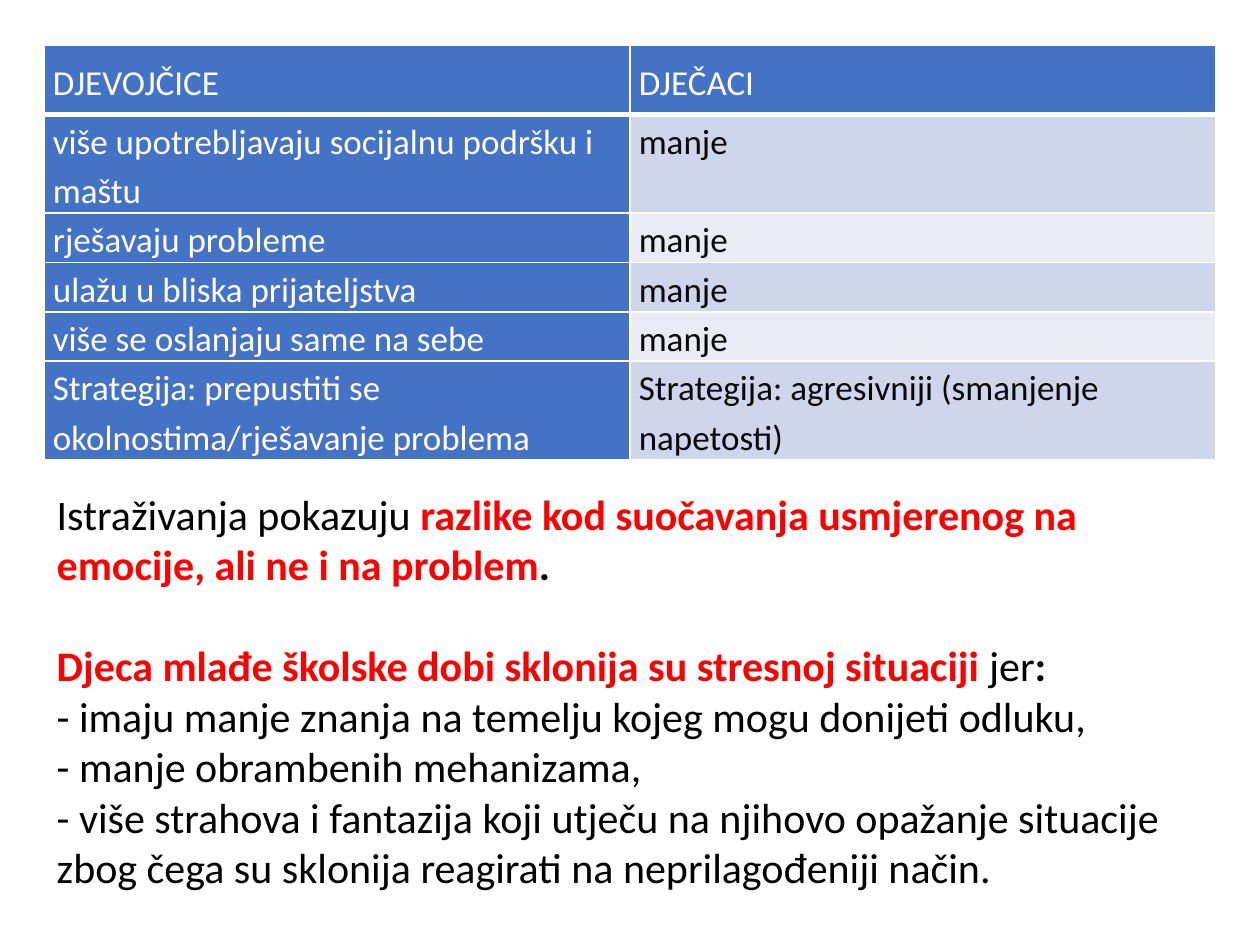
from dataclasses import dataclass

from lxml import etree
from pptx import Presentation
from pptx import util as u
from pptx.dml.color import RGBColor
from pptx.enum import text
from pptx.oxml import ns


@dataclass(frozen=True)
class Theme:
    face: str = "Calibri"
    cell: int = 20
    body: int = 24
    gap: int = 29
    blue: str = "4472C4"
    bands: tuple = ("CFD5EA", "E9EBF5")
    white: str = "FFFFFF"
    ink: str = "07080B"
    black: str = "000000"
    red: str = "FF0000"


T = Theme()
WIDE, HIGH = u.Inches(10), u.Inches(7.5)
LEFT, SPAN = 0.035, 0.93
ROWS = (0.55, 0.72, 0.35, 0.35, 0.35, 0.72)

PAIRS = [
    ("DJEVOJČICE", "DJEČACI"),
    ("više upotrebljavaju socijalnu podršku i maštu", "manje"),
    ("rješavaju probleme", "manje"),
    ("ulažu u bliska prijateljstva", "manje"),
    ("više se oslanjaju same na sebe", "manje"),
    ("Strategija: prepustiti se okolnostima/rješavanje problema",
     "Strategija: agresivniji (smanjenje napetosti)"),
]

LINES = [
    (0, [("Istraživanja pokazuju ", T.black, False),
         ("razlike kod suočavanja usmjerenog na emocije, ali ne i na problem", T.red, True),
         (".", T.black, True)]),
    (T.gap, [("Djeca mlađe školske dobi sklonija su stresnoj situaciji ", T.red, True),
             ("jer", T.black, False),
             (":", T.black, True)]),
    (0, [("- imaju manje znanja na temelju kojeg mogu donijeti odluku,", T.black, False)]),
    (0, [("- manje obrambenih mehanizama,", T.black, False)]),
    (0, [("- više strahova i fantazija koji utječu na njihovo opažanje situacije "
          "zbog čega su sklonija reagirati na neprilagođeniji način.", T.black, False)]),
]


def apply(item, **form):
    for key, value in form.items():
        setattr(item, key, value)


def place(x, y, w, h):
    return [int(n) for n in (x * WIDE, y * HIGH, w * WIDE, h * HIGH)]


def write(para, words, size, color, bold=False):
    run = para.add_run()
    run.text = words
    apply(run.font, name=T.face, size=u.Pt(size), bold=bold)
    run.font.color.rgb = RGBColor.from_string(color)


def edge(cell, sides):
    props = cell._tc.get_or_add_tcPr()
    for side, width in sides.items():
        line = etree.SubElement(props, ns.qn(f"a:ln{side}"), w=str(u.Pt(width)))
        fill = etree.SubElement(line, ns.qn("a:solidFill"))
        etree.SubElement(fill, ns.qn("a:srgbClr"), val=T.white)


def paint(cell, words, row, col):
    head = row == 0
    dark = head or col == 0
    edge(cell, {"L": 1, "R": 1, "T": 1, "B": 3 if head else 1})
    cell.fill.solid()
    tint = T.blue if dark else T.bands[(row - 1) % 2]
    cell.fill.fore_color.rgb = RGBColor.from_string(tint)
    apply(cell, margin_left=u.Inches(0.07), margin_right=u.Inches(0.07),
          margin_top=0, margin_bottom=0,
          vertical_anchor=text.MSO_ANCHOR.MIDDLE if head else text.MSO_ANCHOR.TOP)
    para = cell.text_frame.paragraphs[0]
    para.line_spacing = 1.15
    write(para, words, T.cell, T.white if dark else T.ink)


def grid(slide):
    box = place(LEFT, 0.048, SPAN, 0.41)
    table = slide.shapes.add_table(len(PAIRS), 2, *box).table
    for row, pair in enumerate(PAIRS):
        table.rows[row].height = u.Inches(ROWS[row])
        for col, words in enumerate(pair):
            paint(table.cell(row, col), words, row, col)


def prose(body):
    left, top, width, height = place(LEFT, 0.51, SPAN, 0.44)
    apply(body, left=left, top=top, width=width, height=height)
    frame = body.text_frame
    apply(frame, word_wrap=True, auto_size=text.MSO_AUTO_SIZE.NONE,
          vertical_anchor=text.MSO_ANCHOR.TOP)
    for i, (gap, runs) in enumerate(LINES):
        para = frame.add_paragraph() if i else frame.paragraphs[0]
        apply(para, space_before=u.Pt(gap), space_after=u.Pt(0), line_spacing=1.0)
        props = para._p.get_or_add_pPr()
        props.set("marL", "0")
        props.set("indent", "0")
        etree.SubElement(props, ns.qn("a:buNone"))
        for words, color, bold in runs:
            write(para, words, T.body, color, bold)


def main():
    deck = Presentation()
    apply(deck, slide_width=WIDE, slide_height=HIGH)
    slide = deck.slides.add_slide(deck.slide_layouts[1])
    title = slide.shapes.title._element
    title.getparent().remove(title)
    grid(slide)
    prose(slide.placeholders[1])
    deck.save("out.pptx")


if __name__ == "__main__":
    main()
